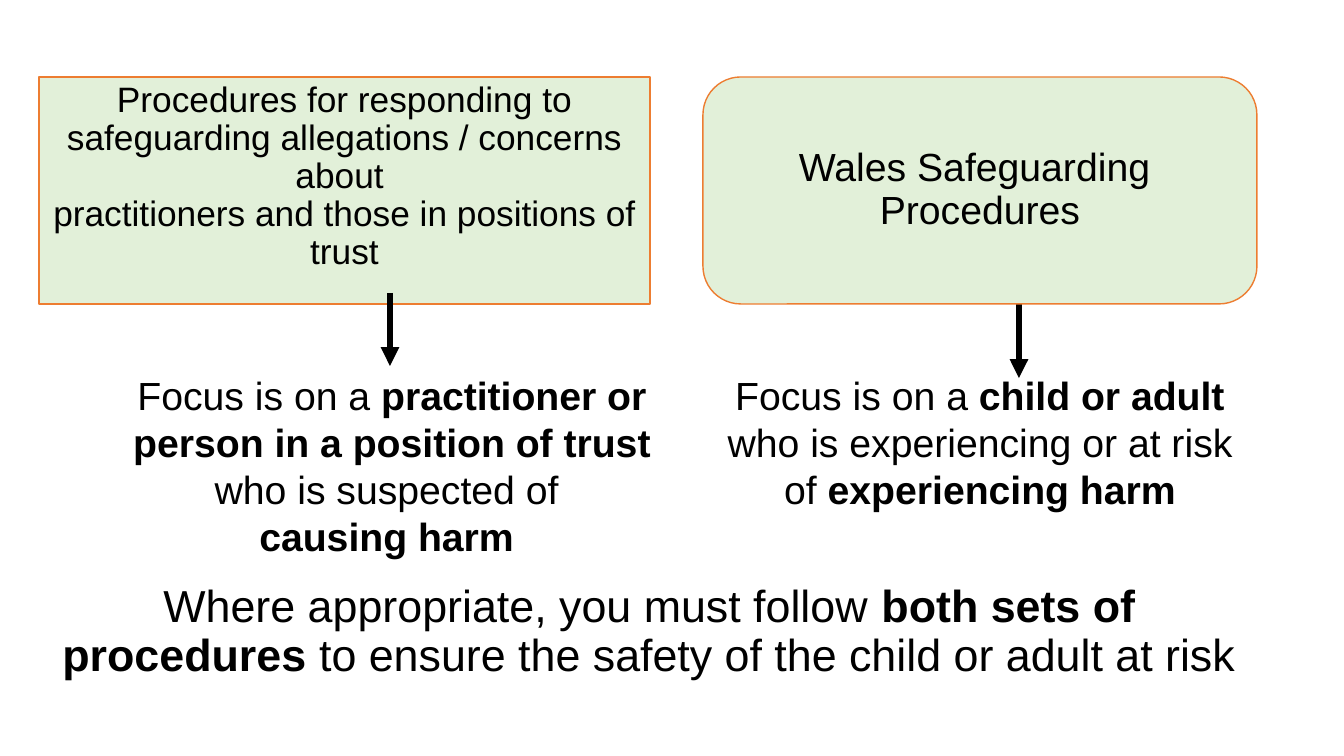
from lxml import etree
from pptx import Presentation
from pptx.dml.color import RGBColor
from pptx.enum.shapes import MSO_CONNECTOR, MSO_SHAPE
from pptx.enum.text import MSO_ANCHOR, PP_ALIGN
from pptx.oxml.ns import qn
from pptx.util import Pt

PX = 914400 / 100.8
BLACK = RGBColor(0, 0, 0)
GREEN = RGBColor(0xE2, 0xF0, 0xD9)
ORANGE = RGBColor(0xED, 0x7D, 0x31)
RECT, ROUND = MSO_SHAPE.RECTANGLE, MSO_SHAPE.ROUNDED_RECTANGLE
TOP, MIDDLE = MSO_ANCHOR.TOP, MSO_ANCHOR.MIDDLE
CENTER = PP_ALIGN.CENTER
STRAIGHT = MSO_CONNECTOR.STRAIGHT


def px(*nums):
    return [round(n * PX) for n in nums]


def write(shape, lines, size, anchor=TOP, gap=0, space=1.0):
    """Fill a shape with one paragraph; lines hold plain and bold runs in turn."""
    frame = shape.text_frame
    frame.word_wrap = True
    frame.vertical_anchor = anchor
    para = frame.paragraphs[0]
    para.alignment = CENTER
    para.line_spacing = space
    para.space_after = Pt(gap)
    font = para.font
    font.name, font.size = "Arial", Pt(size)
    font.color.rgb = BLACK
    for row, line in enumerate(lines):
        if row:
            para.add_line_break()
        for spot, text in enumerate(line):
            if text:
                run = para.add_run()
                run.text = text
                run.font.bold = spot % 2 == 1


def add_box(slide, kind, area, lines, size, anchor):
    box = slide.shapes.add_shape(kind, *px(*area))
    box.shadow.inherit = False
    box.fill.solid()
    box.fill.fore_color.rgb = GREEN
    box.line.color.rgb = ORANGE
    box.line.width = Pt(1)
    write(box, lines, size, anchor, space=0.9)


def add_text(slide, area, lines, size, space=1.0):
    box = slide.shapes.add_textbox(*px(*area))
    write(box, lines, size, gap=12, space=space)


def add_arrow(slide, x, top, end):
    arrow = slide.shapes.add_connector(STRAIGHT, *px(x, top, x, end))
    arrow.line.color.rgb = BLACK
    arrow.line.width = Pt(4.5)
    etree.SubElement(arrow.line._get_or_add_ln(), qn("a:tailEnd"), type="triangle")
    etree.SubElement(arrow._element.spPr, qn("a:effectLst"))


def main():
    deck = Presentation()
    deck.slide_width, deck.slide_height = px(1344, 756)
    slide = deck.slides.add_slide(deck.slide_layouts[6])

    add_text(slide, (39, 579, 1221, 170), [
        ("Where appropriate, you must follow ", "both sets of procedures ",
         "to ensure the safety of the child or adult at risk")], 32, 0.9)
    add_box(slide, RECT, (39, 77, 611, 227), [
        ("Procedures for responding to safeguarding allegations / concerns about ",),
        ("practitioners and those in positions of trust",)], 25.2, TOP)
    add_text(slide, (115, 366, 554, 200), [
        ("Focus is on a ", "practitioner or person in a position of trust ",
         "who is suspected of "),
        ("", "causing harm ")], 28)
    add_text(slide, (703, 366, 554, 152), [
        ("Focus is on a ", "child or adult ",
         "who is experiencing or at risk of ", "experiencing harm")], 28)
    add_arrow(slide, 390, 293, 366)
    add_arrow(slide, 1019, 237, 378)
    add_box(slide, ROUND, (703, 77, 554, 227), [
        ("Wales Safeguarding ",), ("Procedures",)], 28, MIDDLE)

    deck.save("out.pptx")


if __name__ == "__main__":
    main()
